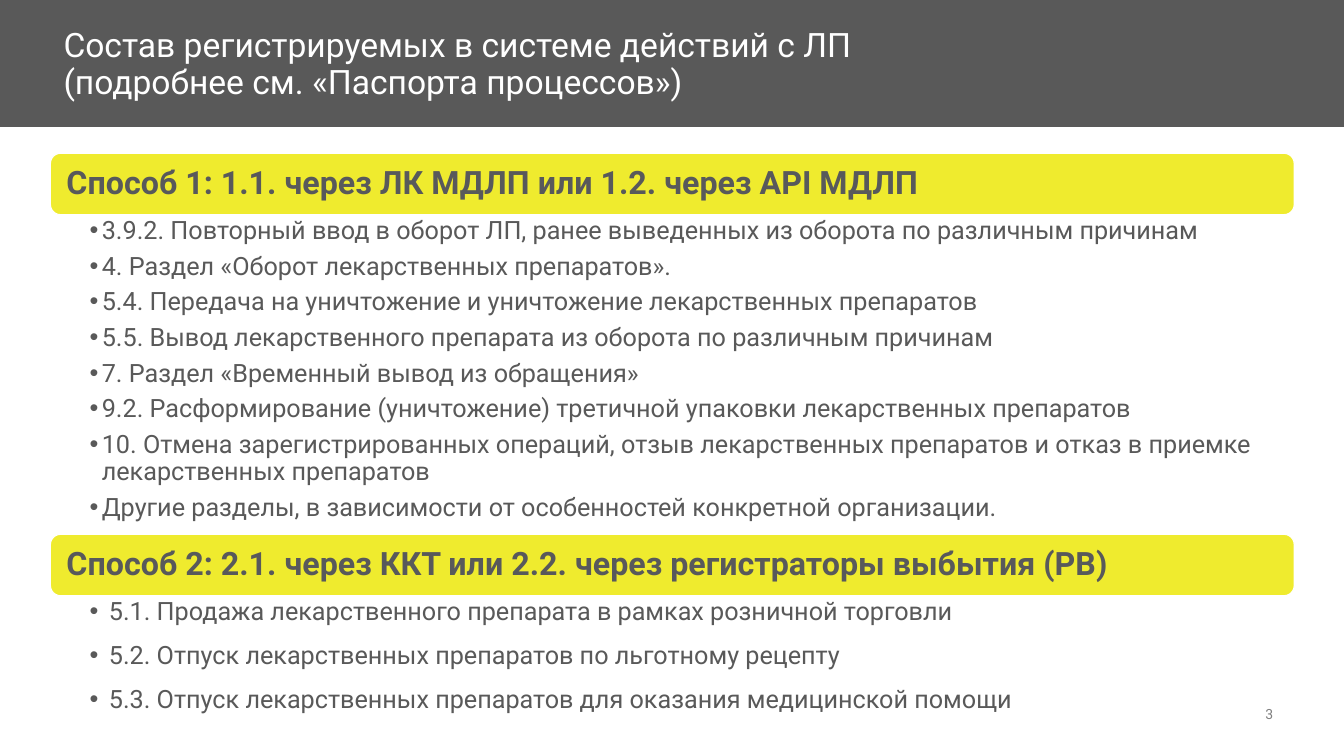
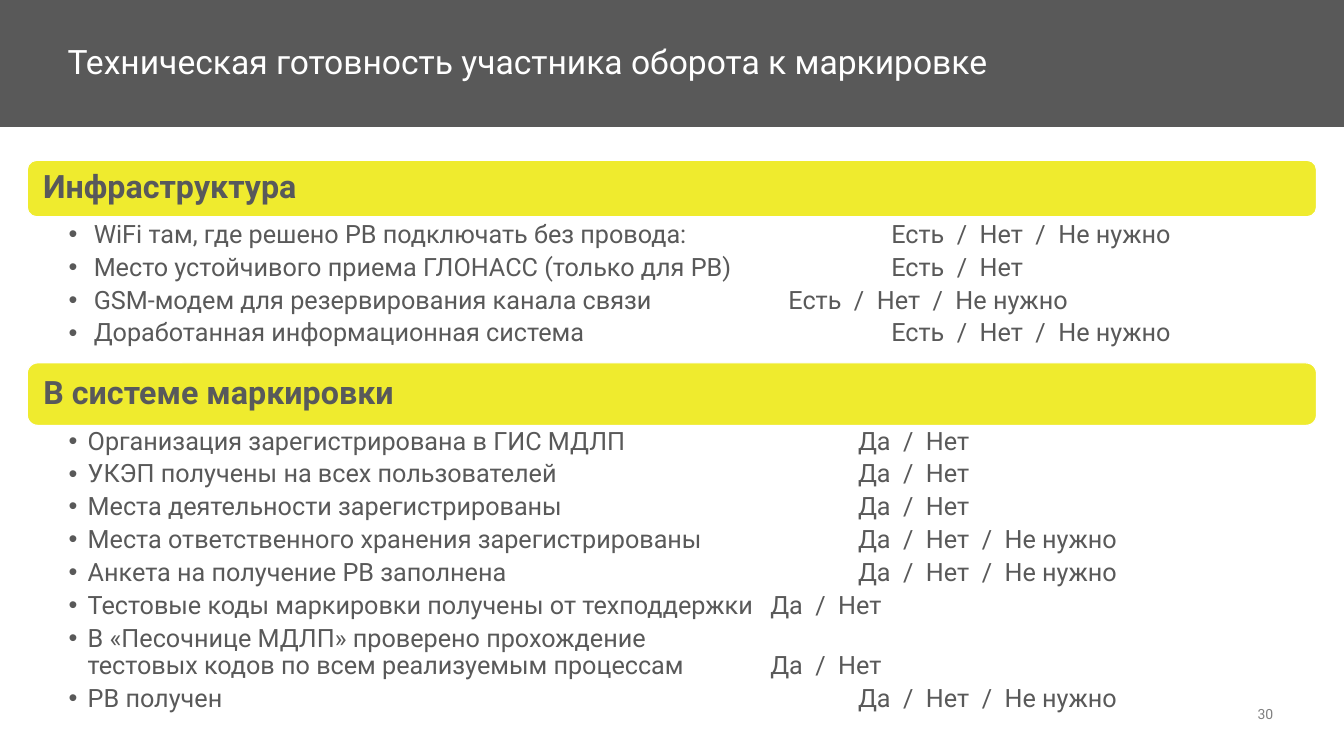
from dataclasses import dataclass

from lxml import etree
from pptx import Presentation
from pptx import util as u
from pptx.dml.color import RGBColor
from pptx.enum import shapes, text
from pptx.oxml.ns import qn


@dataclass(frozen=True)
class Theme:
    """Colours, font and type sizes shared by the slides."""
    font: str = "Roboto"
    dark: str = "595959"
    heading: str = "58595B"
    accent: str = "EFEB2E"
    light: str = "FFFFFF"
    muted: str = "808080"
    title_size: int = 24
    heading_size: int = 23
    body_size: int = 18
    number_size: int = 10


class Deck:
    """Holds the style and the current slide on a grid of 100 columns by 100 rows."""

    def __init__(self, theme):
        """Start a wide presentation."""
        self.t = theme
        self.prs = Presentation()
        self.prs.slide_width, self.prs.slide_height = u.Inches(13.33), u.Inches(7.5)

    def box(self, x, y, w, h):
        """Turn columns and rows into lengths."""
        sw, sh = self.prs.slide_width, self.prs.slide_height
        return [int(v * full / 100) for v, full in ((x, sw), (y, sh), (w, sw), (h, sh))]

    def shape(self, kind, at, fill, line, width):
        """Draw a filled preset shape."""
        sp = self.s.shapes.add_shape(kind, *self.box(*at))
        sp.shadow.inherit = False
        sp.fill.solid()
        sp.fill.fore_color.rgb = RGBColor.from_string(fill)
        sp.line.color.rgb = RGBColor.from_string(line)
        sp.line.width = u.Pt(width)
        return sp

    def frame(self, sp, anchor, insets=(0, 0, 0, 0)):
        """Set the anchor and the insets of a text frame."""
        tf = sp.text_frame
        sides = ("margin_left", "margin_top", "margin_right", "margin_bottom")
        fmt = dict(zip(sides, map(u.Inches, insets)), word_wrap=True, vertical_anchor=anchor)
        for name, value in fmt.items():
            setattr(tf, name, value)
        return tf

    def paragraph(self, p, words, size, color, bold=False, **fmt):
        """Fill a paragraph with styled text."""
        p.text = words
        fmt = {"alignment": text.PP_ALIGN.LEFT, "line_spacing": 0.9, **fmt}
        for name, value in fmt.items():
            setattr(p, name, value)
        for r in p.runs:
            for name, value in {"name": self.t.font, "size": u.Pt(size), "bold": bold}.items():
                setattr(r.font, name, value)
            r.font.color.rgb = RGBColor.from_string(color)

    def slide(self, title, title_at, number):
        """Add a slide with its title band and number."""
        t = self.t
        self.s = self.prs.slides.add_slide(self.prs.slide_layouts[6])
        self.shape(shapes.MSO_SHAPE.RECTANGLE, (0, 0, 100, 16.8), t.dark, t.dark, 0.75)
        sp = self.s.shapes.add_textbox(*self.box(*title_at))
        tf = self.frame(sp, text.MSO_ANCHOR.MIDDLE)
        self.paragraph(tf.paragraphs[0], title, t.title_size, t.light)
        sp = self.s.shapes.add_textbox(*self.box(91.6, 93.33, 3.13, 2.27))
        tf = self.frame(sp, text.MSO_ANCHOR.BOTTOM)
        self.paragraph(tf.paragraphs[0], str(number), t.number_size, t.muted,
                       alignment=text.PP_ALIGN.RIGHT, line_spacing=1.0)

    def heading(self, words, at):
        """Draw a rounded section heading."""
        t = self.t
        sp = self.shape(shapes.MSO_SHAPE.ROUNDED_RECTANGLE, at, t.accent, t.light, 0.85)
        tf = self.frame(sp, text.MSO_ANCHOR.MIDDLE, (0.13, 0.1, 0.13, 0.1))
        self.paragraph(tf.paragraphs[0], words, t.heading_size, t.heading, bold=True)

    def bullets(self, items, at, left, indent, after, pitch=0):
        """Fill a bulleted list with texts or (text, answer, tab column) rows."""
        sp = self.s.shapes.add_textbox(*self.box(*at))
        tf = self.frame(sp, text.MSO_ANCHOR.TOP, (left, 0.03, 0.14, 0.03))
        for i, item in enumerate(items):
            p = tf.paragraphs[0] if i == 0 else tf.add_paragraph()
            words, column = item, 0
            if isinstance(item, tuple):
                words, column = "\t".join(item[:2]), item[2]
            pPr = p._p.get_or_add_pPr()
            pPr.set("marL", str(u.Inches(indent)))
            pPr.set("indent", str(-u.Inches(indent)))
            etree.SubElement(pPr, qn("a:buFont"), typeface="Arial")
            etree.SubElement(pPr, qn("a:buChar"), char="•")
            if column:
                tabs = etree.SubElement(pPr, qn("a:tabLst"))
                etree.SubElement(tabs, qn("a:tab"), pos=str(u.Inches(column * pitch)), algn="l")
            self.paragraph(p, words, self.t.body_size, self.t.dark, space_after=u.Pt(after))


def main():
    """Build both slides and save them."""
    d = Deck(Theme())

    d.slide("Состав регистрируемых в системе действий с ЛП\n"
            "(подробнее см. «Паспорта процессов»)", (4.73, 3.73, 83.1, 9.73), 3)
    x, w = 3.75, 92.55
    d.heading("Способ 1: 1.1. через ЛК МДЛП или 1.2. через API МДЛП", (x, 20.27, w, 8.13))
    d.bullets([
        "3.9.2. Повторный ввод в оборот ЛП, ранее выведенных из оборота по различным причинам",
        "4. Раздел «Оборот лекарственных препаратов».",
        "5.4. Передача на уничтожение и уничтожение лекарственных препаратов",
        "5.5. Вывод лекарственного препарата из оборота по различным причинам",
        "7. Раздел «Временный вывод из обращения»",
        "9.2. Расформирование (уничтожение) третичной упаковки лекарственных препаратов",
        "10. Отмена зарегистрированных операций, отзыв лекарственных препаратов "
        "и отказ в приемке лекарственных препаратов",
        "Другие разделы, в зависимости от особенностей конкретной организации.",
    ], (x, 28.4, w, 42.27), 0.39, 0.12, 6)
    d.heading("Способ 2: 2.1. через ККТ или 2.2. через регистраторы выбытия (РВ)",
              (x, 70.67, w, 8.13))
    d.bullets([
        "5.1. Продажа лекарственного препарата в рамках розничной торговли",
        "5.2. Отпуск лекарственных препаратов по льготному рецепту",
        "5.3. Отпуск лекарственных препаратов для оказания медицинской помощи",
    ], (x, 78.8, w, 16.4), 0.39, 0.19, 12)

    d.slide("Техническая готовность участника оборота к маркировке", (5.03, 6, 83.1, 4.8), 30)
    x, w = 2.03, 95.93
    have, yes = "Есть  /  Нет", "Да  /  Нет"
    have_or_skip, yes_or_skip = (v + "  /  Не нужно" for v in (have, yes))
    d.heading("Инфраструктура", (x, 21.2, w, 7.47))
    d.bullets([
        ("WiFi там, где решено РВ подключать без провода:", have_or_skip, 8),
        ("Место устойчивого приема ГЛОНАСС (только для РВ)", have, 8),
        ("GSM-модем для резервирования канала связи", have_or_skip, 7),
        ("Доработанная информационная система", have_or_skip, 8),
    ], (x, 28.93, w, 19.07), 0.41, 0.25, 4, 1.02)
    d.heading("В системе маркировки", (x, 48, w, 8.27))
    d.bullets([
        ("Организация зарегистрирована в ГИС МДЛП", yes, 9),
        ("УКЭП получены на всех пользователей", yes, 9),
        ("Места деятельности зарегистрированы", yes, 9),
        ("Места ответственного хранения зарегистрированы", yes_or_skip, 9),
        ("Анкета на получение РВ заполнена", yes_or_skip, 9),
        ("Тестовые коды маркировки получены от техподдержки", yes, 8),
        ("В «Песочнице МДЛП» проверено прохождение\n"
         "тестовых кодов по всем реализуемым процессам", yes, 8),
        ("РВ получен", yes_or_skip, 9),
    ], (x, 56.27, w, 41.87), 0.41, 0.19, 4, 0.87)

    d.prs.save("out.pptx")


if __name__ == "__main__":
    main()
